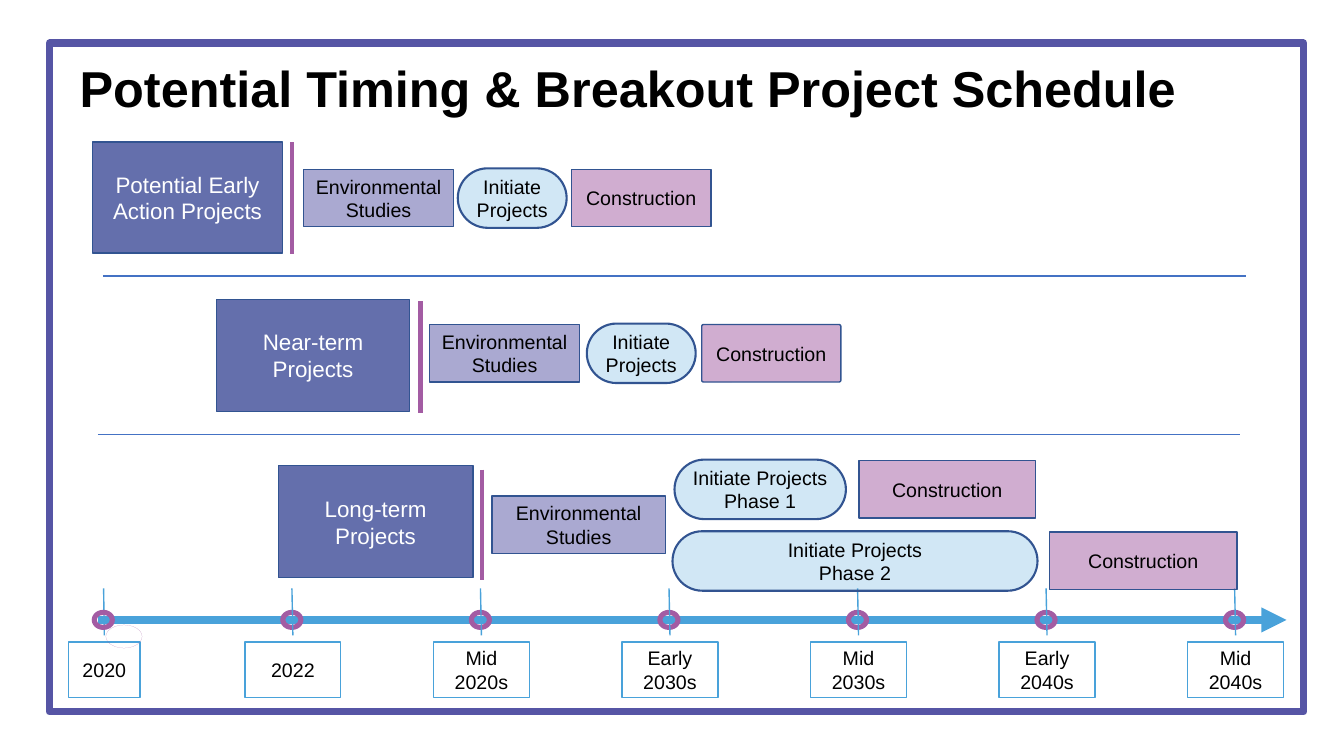
"""Build the project schedule slide with its phases and timeline."""
from dataclasses import dataclass
from typing import Optional

from pptx import Presentation
from pptx.dml.color import RGBColor
from pptx.enum.shapes import MSO_CONNECTOR as Connector, MSO_SHAPE as Shape
from pptx.enum.text import MSO_ANCHOR as Anchor, MSO_AUTO_SIZE as AutoSize, PP_ALIGN as Align
from pptx.oxml.ns import qn
from pptx.util import Inches, Pt
from lxml.etree import SubElement


@dataclass(frozen=True)
class Theme:
    font: str = "Arial"
    black: str = "000000"
    white: str = "FFFFFF"
    navy: str = "314091"
    outline: str = "325491"
    violet: str = "5655A5"
    sky: str = "49A2DA"
    magenta: str = "A35CA3"
    divider: str = "4472C4"
    title_size: int = 36
    heading_size: int = 16
    label_size: int = 14


THEME = Theme()


@dataclass(frozen=True)
class Style:
    fill: str
    opacity: int
    line_width: float = 1
    corner: float = 0
    size: int = THEME.label_size
    color: str = THEME.black


HEADING = Style(THEME.navy, 75, size=THEME.heading_size, color=THEME.white)
STUDY = Style(THEME.violet, 50)
INITIATE = Style(THEME.sky, 25, line_width=1.5, corner=0.5)
CONSTRUCTION = Style(THEME.magenta, 50)


@dataclass(frozen=True)
class Box:
    text: str
    style: Style
    left: float
    top: float
    width: float
    height: float
    corner: Optional[float] = None


@dataclass(frozen=True)
class Line:
    start: tuple[float, float]
    end: tuple[float, float]
    color: str
    width: float
    arrow: bool = False


STUDIES = "Environmental Studies"
BOXES = [
    Box("Potential Early Action Projects", HEADING, 0.92, 1.41, 1.88, 1.1),
    Box(STUDIES, STUDY, 3.01, 1.68, 1.49, 0.57),
    Box("Initiate Projects", INITIATE, 4.54, 1.67, 1.08, 0.59),
    Box("Construction", CONSTRUCTION, 5.67, 1.68, 1.38, 0.57),
    Box("Near-term Projects", HEADING, 2.15, 2.97, 1.91, 1.11),
    Box(STUDIES, STUDY, 4.26, 3.22, 1.49, 0.57),
    Box("Initiate Projects", INITIATE, 5.82, 3.21, 1.08, 0.59),
    Box("Construction", CONSTRUCTION, 6.96, 3.22, 1.38, 0.57, corner=0.03),
    Box("Long-term Projects", HEADING, 2.76, 4.62, 1.93, 1.11),
    Box(STUDIES, STUDY, 4.88, 4.92, 1.72, 0.57),
    Box("Initiate Projects\nPhase 1", INITIATE, 6.69, 4.56, 1.7, 0.59),
    Box("Construction", CONSTRUCTION, 8.52, 4.57, 1.75, 0.57),
    Box("Initiate Projects\nPhase 2", INITIATE, 6.67, 5.27, 3.62, 0.59),
    Box("Construction", CONSTRUCTION, 10.41, 5.28, 1.86, 0.57),
]
AXIS = Line((0.97, 6.15), (12.76, 6.15), THEME.sky, 6, arrow=True)
LINES = [
    Line((2.9, 1.41), (2.9, 2.52), THEME.magenta, 3),
    Line((4.17, 2.99), (4.17, 4.1), THEME.magenta, 3),
    Line((4.78, 4.66), (4.78, 5.75), THEME.magenta, 3),
    Line((1.02, 2.74), (12.36, 2.74), THEME.divider, 1),
    Line((0.97, 4.31), (12.3, 4.31), THEME.divider, 1),
]
MILESTONES = ["2020", "2022", "Mid\n2020s", "Early\n2030s", "Mid\n2030s", "Early\n2040s", "Mid\n2040s"]
MILESTONE_STEP = 1.87


def write_text(shape, text: str, *, size: int, color: str = THEME.black, bold: bool = False,
               align=Align.CENTER, anchor=Anchor.MIDDLE, inset: float = 0.08,
               spacing: float = 1.0) -> None:
    frame = shape.text_frame
    frame.text = text
    frame.word_wrap = True
    frame.auto_size = AutoSize.NONE
    frame.vertical_anchor = anchor
    frame.margin_left = frame.margin_right = Inches(inset)
    frame.margin_top = frame.margin_bottom = Inches(0.05)
    for paragraph in frame.paragraphs:
        paragraph.alignment = align
        paragraph.line_spacing = spacing
        paragraph.space_before = Pt(0)
        for run in paragraph.runs:
            run.font.name = THEME.font
            run.font.size = Pt(size)
            run.font.bold = bold
            run.font.color.rgb = RGBColor.from_string(color)


def add_shape(slide, kind, left: float, top: float, width: float, height: float, *,
              fill: Optional[str] = None, opacity: int = 100, line: Optional[str] = None,
              line_width: float = 1, adjustments: tuple[float, ...] = ()):
    shape = slide.shapes.add_shape(kind, Inches(left), Inches(top), Inches(width), Inches(height))
    shape.shadow.inherit = False
    for index, value in enumerate(adjustments):
        shape.adjustments[index] = value
    if fill:
        shape.fill.solid()
        shape.fill.fore_color.rgb = RGBColor.from_string(fill)
        if opacity < 100:
            color = shape.fill._xPr.find(qn("a:solidFill")).find(qn("a:srgbClr"))
            SubElement(color, qn("a:alpha"), val=str(opacity * 1000))
    else:
        shape.fill.background()
    if line:
        shape.line.color.rgb = RGBColor.from_string(line)
        shape.line.width = Pt(line_width)
    else:
        shape.line.fill.background()
    return shape


def add_line(slide, line: Line) -> None:
    points = [Inches(value) for value in (*line.start, *line.end)]
    connector = slide.shapes.add_connector(Connector.STRAIGHT, *points)
    connector.line.color.rgb = RGBColor.from_string(line.color)
    connector.line.width = Pt(line.width)
    if line.arrow:
        SubElement(connector.line._get_or_add_ln(), qn("a:tailEnd"), type="triangle")
    SubElement(connector._element.spPr, qn("a:effectLst"))


def add_box(slide, box: Box) -> None:
    style = box.style
    corner = style.corner if box.corner is None else box.corner
    shape = add_shape(slide, Shape.ROUNDED_RECTANGLE, box.left, box.top, box.width, box.height,
                      fill=style.fill, opacity=style.opacity, line=THEME.outline,
                      line_width=style.line_width, adjustments=(corner,))
    write_text(shape, box.text, size=style.size, color=style.color)


def add_milestone_label(slide, index: int) -> None:
    trim = 0.12 if index == 0 else 0
    label = add_shape(slide, Shape.LINE_CALLOUT_1, 0.56 + index * MILESTONE_STEP + trim, 6.37,
                      0.95 - 2 * trim, 0.55, line=THEME.sky,
                      adjustments=(-0.12, 0.5, -0.97, 0.49))
    write_text(label, MILESTONES[index], size=THEME.label_size)


def add_timeline(slide) -> None:
    add_milestone_label(slide, 0)
    add_line(slide, AXIS)
    add_shape(slide, Shape.DONUT, 1.05, 6.2, 0.36, 0.23, fill=THEME.magenta, adjustments=(0,))
    for index in range(len(MILESTONES)):
        add_shape(slide, Shape.DONUT, 0.91 + index * MILESTONE_STEP, 6.05, 0.23, 0.2,
                  fill=THEME.magenta, adjustments=(0.25,))
    for index in range(1, len(MILESTONES)):
        add_milestone_label(slide, index)


def main() -> None:
    presentation = Presentation()
    presentation.slide_width, presentation.slide_height = Inches(13.33), Inches(7.5)
    slide = presentation.slides.add_slide(presentation.slide_layouts[5])
    title = slide.shapes.title
    title.left, title.top, title.width, title.height = map(Inches, (0.69, 0.58, 12, 2.61))
    write_text(title, "Potential Timing & Breakout Project Schedule", size=THEME.title_size,
               bold=True, align=Align.LEFT, anchor=Anchor.TOP, inset=0.1, spacing=0.9)
    add_shape(slide, Shape.RECTANGLE, 0.49, 0.43, 12.44, 6.63, line=THEME.violet, line_width=5.5)
    add_timeline(slide)
    for box in BOXES:
        add_box(slide, box)
    for line in LINES:
        add_line(slide, line)
    presentation.save("out.pptx")


if __name__ == "__main__":
    main()
